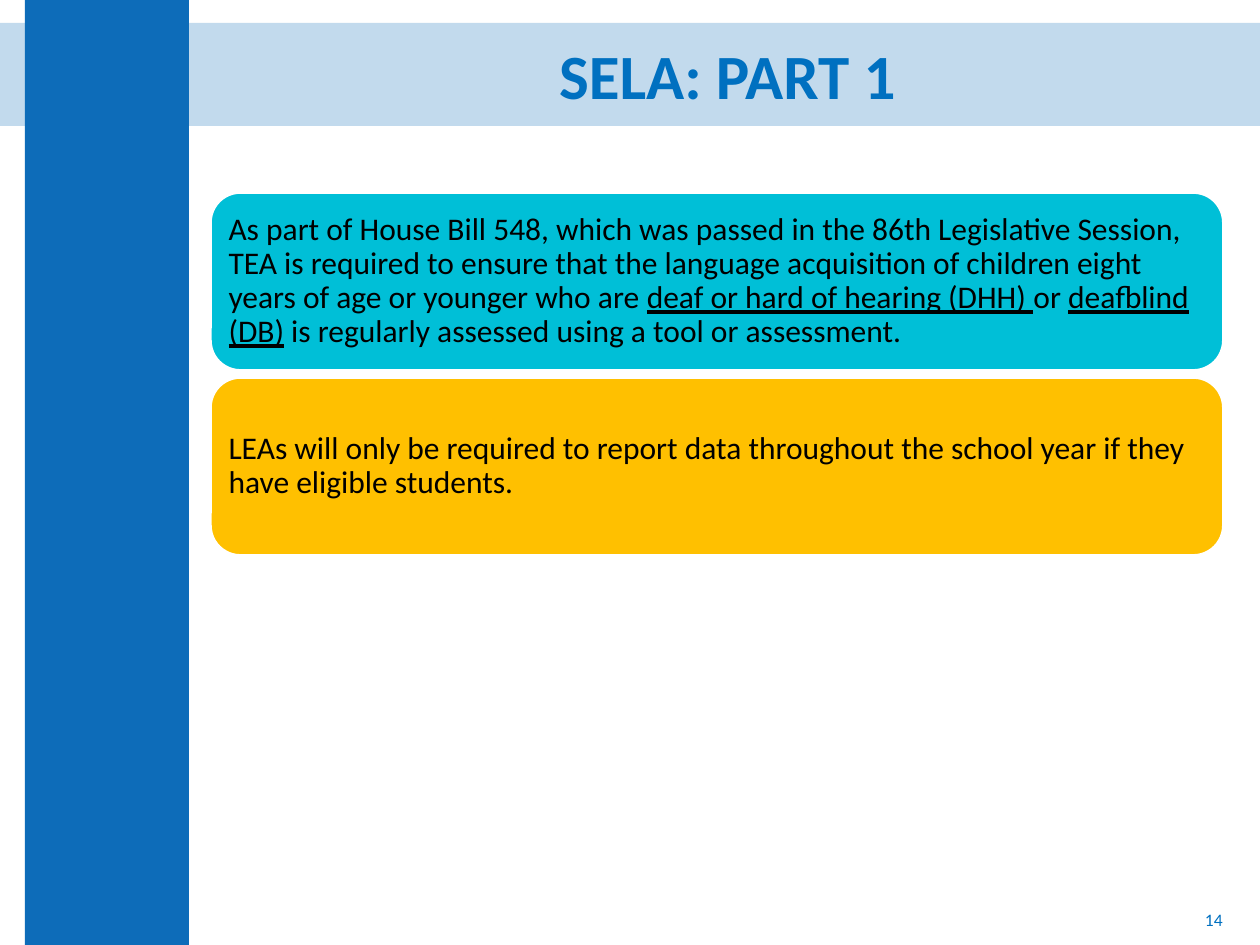
import pptx
import pptx.util
import pptx.dml.color
import pptx.enum.shapes
import pptx.enum.text
import pptx.oxml
import pptx.oxml.ns
import lxml.etree

PX = 914400 // 126
SHAPE = pptx.enum.shapes.MSO_SHAPE
ALIGN = pptx.enum.text.PP_ALIGN

BLUE, TITLE_BLUE, BLACK, WHITE = "0D6CB9", "0070C0", "000000", "FFFFFF"

TITLE = [("SELA: PART 1", {"bold": True})]
PAGE_NUMBER = [("14", {})]
CARDS = [
    ("00BFD7", [
        ("As part of House Bill 548, which was passed in the 86th Legislative Session, "
         "TEA is required to ensure that the language acquisition of children eight "
         "years of age or younger who are ", {}),
        ("deaf or hard of hearing (DHH) ", {"underline": True}),
        ("or ", {}),
        ("deafblind (DB)", {"underline": True}),
        (" is regularly assessed using a tool or assessment.", {}),
    ]),
    ("FFC000", [
        ("LEAs will only be required to report data throughout the school year "
         "if they have eligible students.", {}),
    ]),
]
CARD_LEFT, CARD_TOP, CARD_WIDTH, CARD_HEIGHT, CARD_GAP = 211, 193, 1012, 177, 8
CARD_INSET = 9


def px(length):
    return pptx.util.Emu(round(length * PX))


def rgb(color):
    return pptx.dml.color.RGBColor.from_string(color)


def add_block(slide, preset, box, fill, line=None):
    block = slide.shapes.add_shape(preset, *map(px, box))
    block.shadow.inherit = False
    block.fill.solid()
    block.fill.fore_color.rgb = rgb(fill)
    if line:
        block.line.color.rgb = rgb(line)
        block.line.width = pptx.util.Pt(1)
    else:
        block.line.fill.background()
    return block


def set_alpha(block, percent):
    """Make the block's fill translucent."""
    color = block.fill._xPr.find(".//" + pptx.oxml.ns.qn("a:srgbClr"))
    lxml.etree.SubElement(color, pptx.oxml.ns.qn("a:alpha"), val=str(percent * 1000))


def write(shape, runs, size, color, align, line_spacing=0.9):
    frame = shape.text_frame
    frame.word_wrap = True
    frame.vertical_anchor = pptx.enum.text.MSO_ANCHOR.MIDDLE
    paragraph = frame.paragraphs[0]
    paragraph.alignment = align
    paragraph.line_spacing = line_spacing
    for words, emphasis in runs:
        run = paragraph.add_run()
        run.text = words
        run.font.color.rgb = rgb(color)
        formats = {"name": "Calibri", "size": pptx.util.Pt(size), **emphasis}
        for attribute, value in formats.items():
            setattr(run.font, attribute, value)


def main():
    deck = pptx.Presentation()
    deck.slide_width, deck.slide_height = pptx.util.Inches(10), pptx.util.Inches(7.5)
    slide = deck.slides.add_slide(deck.slide_layouts[6])

    title_band = add_block(slide, SHAPE.RECTANGLE, (0, 23, 1260, 103), BLUE)
    set_alpha(title_band, 25)
    add_block(slide, SHAPE.RECTANGLE, (25, 0, 164, 945), BLUE)

    page_number = slide.shapes.add_textbox(*map(px, (951, 895, 284, 50)))
    write(page_number, PAGE_NUMBER, 10, TITLE_BLUE, ALIGN.RIGHT, line_spacing=1.0)
    title = slide.shapes.add_textbox(*map(px, (197, 28, 1061, 103)))
    write(title, TITLE, 36, TITLE_BLUE, ALIGN.CENTER)

    for row, (fill, runs) in enumerate(CARDS):
        top = CARD_TOP + row * (CARD_HEIGHT + CARD_GAP)
        card = add_block(slide, SHAPE.ROUNDED_RECTANGLE,
                         (CARD_LEFT, top, CARD_WIDTH, CARD_HEIGHT), fill, WHITE)
        for side in ("left", "top", "right", "bottom"):
            setattr(card.text_frame, f"margin_{side}", px(CARD_INSET))
        write(card, runs, 18, BLACK, ALIGN.LEFT)

    deck.save("out.pptx")


if __name__ == "__main__":
    main()
